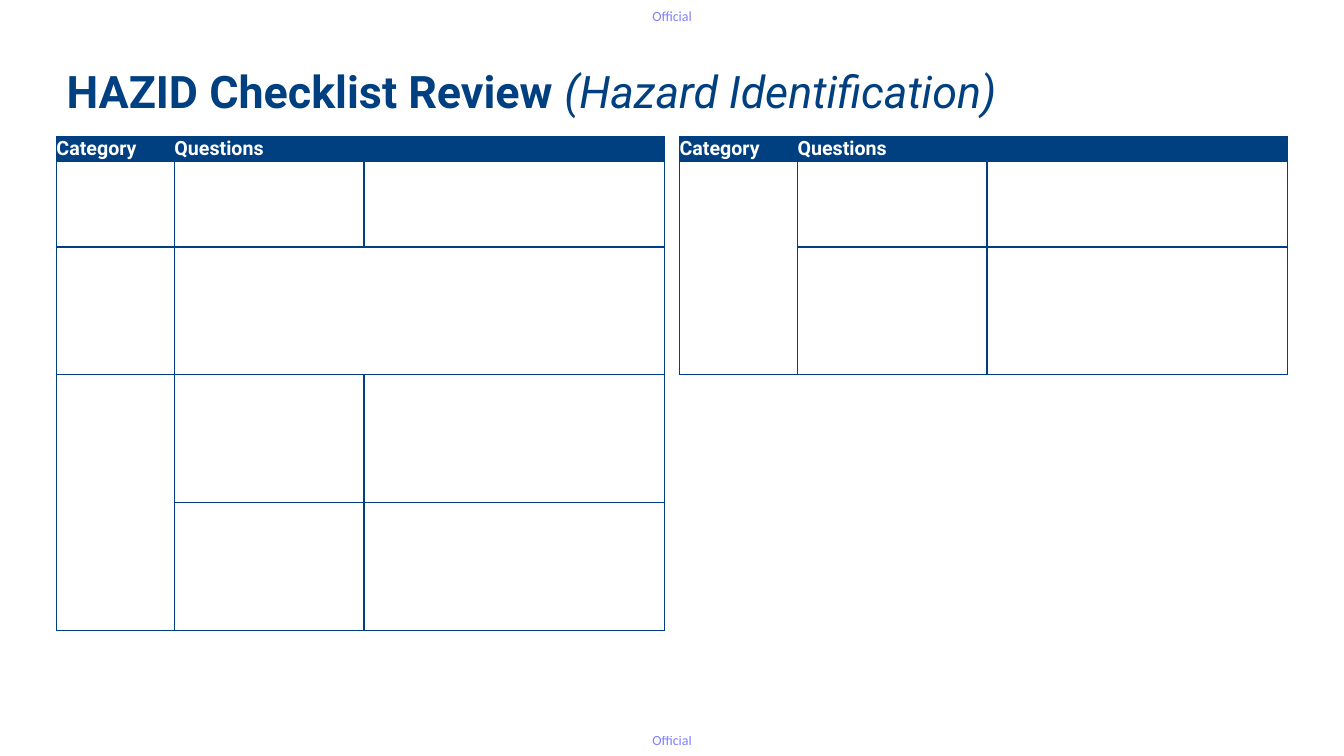
from dataclasses import dataclass

from lxml.etree import SubElement
from pptx import Presentation
from pptx.dml.color import RGBColor
from pptx.enum.text import MSO_ANCHOR as Anchor, MSO_AUTO_SIZE as AutoSize
from pptx.oxml.ns import qn
from pptx.util import Inches, Pt

NAVY = "004080"
WHITE = "FFFFFF"
MARKING_BLUE = "0000FF"
HEADER_HEIGHT = 0.24
COLUMN_WIDTHS = (1.17, 1.88, 2.98)
TABLE_TOP = 1.36


@dataclass(frozen=True)
class Merge:
    first: tuple[int, int]
    last: tuple[int, int]


@dataclass(frozen=True)
class Checklist:
    left: float
    body_heights: tuple[float, ...]
    merges: tuple[Merge, ...]


HEADER_MERGE = Merge((0, 1), (0, 2))
CHECKLISTS = (
    Checklist(0.56, (0.85, 1.27, 1.27, 1.27),
              (HEADER_MERGE, Merge((2, 1), (2, 2)), Merge((3, 0), (4, 0)))),
    Checklist(6.74, (0.85, 1.27),
              (HEADER_MERGE, Merge((1, 0), (2, 0)))),
)
MARKING_TOPS = (0.07, 7.26)


def color(value: str) -> RGBColor:
    return RGBColor.from_string(value)


def add_run(paragraph, text: str, font_name: str, size: float, value: str,
            bold: bool = False, italic: bool = False):
    run = paragraph.add_run()
    run.text = text
    run.font.name = font_name
    run.font.size = Pt(size)
    run.font.bold = bold
    run.font.italic = italic
    run.font.color.rgb = color(value)
    return run


def clear_margins(target) -> None:
    target.margin_left = target.margin_right = 0
    target.margin_top = target.margin_bottom = 0


def add_marking(slide, top: float) -> None:
    box = slide.shapes.add_textbox(Inches(6.47), Inches(top), Inches(0.43), Inches(0.17))
    frame = box.text_frame
    clear_margins(frame)
    frame.word_wrap = False
    frame.auto_size = AutoSize.SHAPE_TO_FIT_TEXT
    run = add_run(frame.paragraphs[0], "Official", "Calibri", 10, MARKING_BLUE)
    rgb = run.font.fill._xPr.find(f"{qn('a:solidFill')}/{qn('a:srgbClr')}")
    SubElement(rgb, qn("a:alpha"), val="50000")


def format_title(slide) -> None:
    title = slide.shapes.title
    title.left, title.top = Inches(0.56), Inches(0.38)
    title.width, title.height = Inches(12.2), Inches(0.84)
    frame = title.text_frame
    frame.word_wrap = True
    frame.auto_size = AutoSize.NONE
    frame.vertical_anchor = Anchor.BOTTOM
    paragraph = frame.paragraphs[0]
    paragraph.alignment = 1
    paragraph.line_spacing = 0.9
    add_run(paragraph, "HAZID Checklist Review ", "Roboto", 32, NAVY, bold=True)
    add_run(paragraph, "(Hazard Identification)", "Roboto", 32, NAVY, italic=True)


def add_borders(cell) -> None:
    properties = cell._tc.get_or_add_tcPr()
    for side in ("a:lnL", "a:lnR", "a:lnT", "a:lnB"):
        line = SubElement(properties, qn(side), w=str(Pt(1)))
        fill = SubElement(line, qn("a:solidFill"))
        SubElement(fill, qn("a:srgbClr"), val=NAVY)


def add_checklist(slide, checklist: Checklist) -> None:
    heights = (HEADER_HEIGHT, *checklist.body_heights)
    table = slide.shapes.add_table(
        len(heights), len(COLUMN_WIDTHS), Inches(checklist.left), Inches(TABLE_TOP),
        Inches(sum(COLUMN_WIDTHS)), Inches(sum(heights))).table
    table.first_row = False
    table.horz_banding = False
    for column, width in zip(table.columns, COLUMN_WIDTHS):
        column.width = Inches(width)
    for row, height in zip(table.rows, heights):
        row.height = Inches(height)
    for cell in table.iter_cells():
        add_borders(cell)
        cell.fill.background()
    for cell in table.rows[0].cells:
        clear_margins(cell)
        cell.vertical_anchor = Anchor.MIDDLE
        cell.fill.solid()
        cell.fill.fore_color.rgb = color(NAVY)
    for column, heading in enumerate(("Category", "Questions")):
        paragraph = table.cell(0, column).text_frame.paragraphs[0]
        add_run(paragraph, heading, "Roboto", 14, WHITE, bold=True)
    for merge in checklist.merges:
        table.cell(*merge.first).merge(table.cell(*merge.last))


def main() -> None:
    presentation = Presentation()
    presentation.slide_width = Inches(13.33)
    presentation.slide_height = Inches(7.5)
    slide = presentation.slides.add_slide(presentation.slide_layouts[5])
    for top in MARKING_TOPS:
        add_marking(slide, top)
    format_title(slide)
    for checklist in CHECKLISTS:
        add_checklist(slide, checklist)
    presentation.save("out.pptx")


if __name__ == "__main__":
    main()
